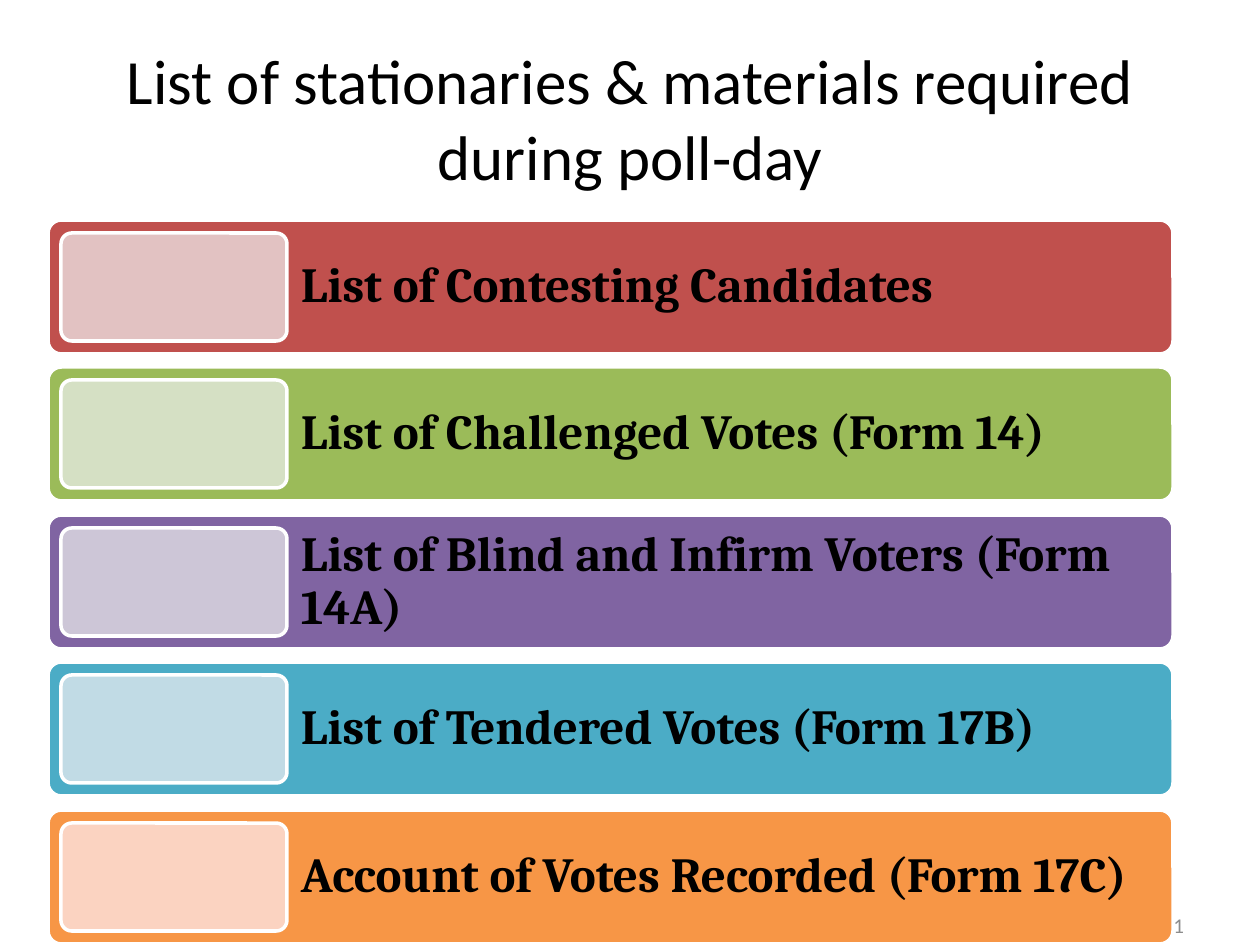
from pptx import Presentation
from pptx import util as u
from pptx.dml.color import RGBColor
from pptx.enum import shapes, text

PX_PER_INCH = 126
BAR_LEFT, BAR_TOP, BAR_WIDTH, BAR_HEIGHT = 48, 220, 1125, 134
BAR_SPAN = 590  # from the top of the first bar to the top of the last
PANEL_INSET, PANEL_WIDTH = 13, 226
LABEL_LEFT = 286

# label, bar colour, panel colour
MATERIALS = [
    ("List of Contesting Candidates", "C0504D", "E2C2C2"),
    ("List of Challenged Votes (Form 14)", "9BBB59", "D5E0C4"),
    ("List of Blind and Infirm Voters (Form 14A)", "8064A2", "CDC6D7"),
    ("List of Tendered Votes (Form 17B)", "4BACC6", "C1DBE5"),
    ("Account of Votes Recorded (Form 17C)", "F79646", "FBD3C1"),
]

TITLE = {"name": "Calibri", "size": u.Pt(36)}
LABEL = {"name": "Cambria", "size": u.Pt(28), "bold": True}
PAGE_NUMBER = {"name": "Calibri", "size": u.Pt(12)}


def px(length):
    return u.Emu(round(length * 914400 / PX_PER_INCH))


def color(hex_string):
    return RGBColor.from_string(hex_string)


def set_attributes(target, values):
    for name, value in values.items():
        setattr(target, name, value)


def add_text(slide, box, wording, font, font_color="000000",
             align=text.PP_ALIGN.LEFT, line_spacing=None, margins=(13, 6)):
    """Add a vertically centred text box; margins are (sides, top and bottom)."""
    frame = slide.shapes.add_textbox(*map(px, box)).text_frame
    side, edge = map(px, margins)
    set_attributes(frame, {
        "word_wrap": True,
        "vertical_anchor": text.MSO_ANCHOR.MIDDLE,
        "margin_left": side, "margin_right": side,
        "margin_top": edge, "margin_bottom": edge,
    })
    paragraph = frame.paragraphs[0]
    set_attributes(paragraph, {"alignment": align, "line_spacing": line_spacing})
    run = paragraph.add_run()
    run.text = wording
    set_attributes(run.font, font)
    run.font.color.rgb = color(font_color)


def add_rounded_box(slide, box, fill):
    shape = slide.shapes.add_shape(
        shapes.MSO_SHAPE.ROUNDED_RECTANGLE, *map(px, box))
    shape.adjustments[0] = 0.1
    shape.shadow.inherit = False
    shape.fill.solid()
    shape.fill.fore_color.rgb = color(fill)
    shape.line.color.rgb = color("FFFFFF")
    shape.line.width = u.Pt(2)


def add_material(slide, top, label, bar_color, panel_color):
    add_rounded_box(slide, (BAR_LEFT, top, BAR_WIDTH, BAR_HEIGHT), bar_color)
    label_width = BAR_LEFT + BAR_WIDTH - LABEL_LEFT
    add_text(slide, (LABEL_LEFT, top, label_width, BAR_HEIGHT), label, LABEL,
             line_spacing=0.9, margins=(15, 15))
    add_rounded_box(slide, (BAR_LEFT + PANEL_INSET, top + PANEL_INSET,
                            PANEL_WIDTH, BAR_HEIGHT - 2 * PANEL_INSET),
                    panel_color)


def main():
    presentation = Presentation()
    presentation.slide_width = px(1260)
    presentation.slide_height = px(945)
    slide = presentation.slides.add_slide(presentation.slide_layouts[6])

    add_text(slide, (903, 900, 294, 50), "61", PAGE_NUMBER, "8C8C8C",
             text.PP_ALIGN.RIGHT)
    for index, material in enumerate(MATERIALS):
        top = BAR_TOP + index * BAR_SPAN // (len(MATERIALS) - 1)
        add_material(slide, top, *material)
    add_text(slide, (63, 38, 1134, 158),
             "List of stationaries & materials required during poll-day",
             TITLE, align=text.PP_ALIGN.CENTER)

    presentation.save("out.pptx")


if __name__ == "__main__":
    main()
